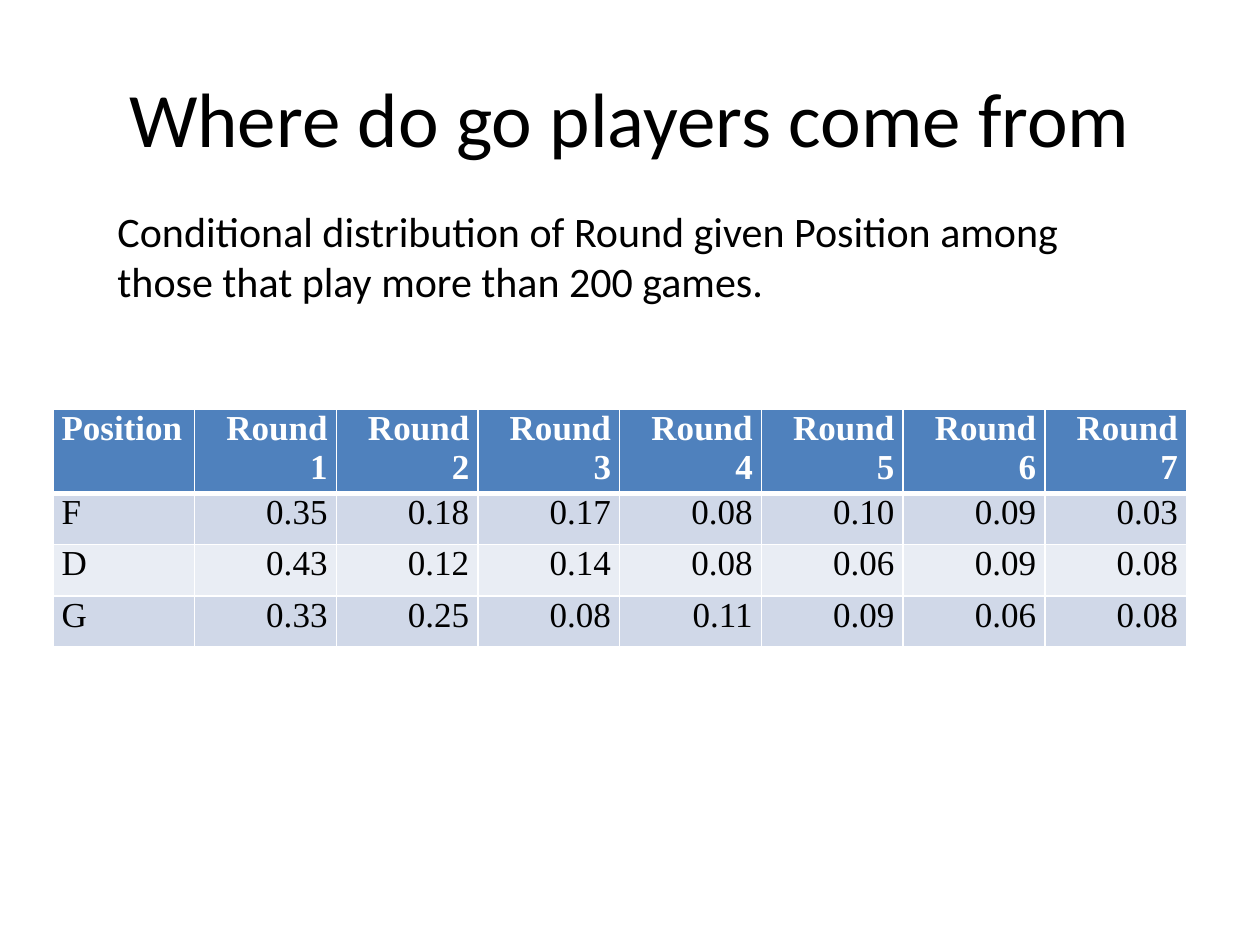
from dataclasses import dataclass

import lxml.etree
import pptx
import pptx.dml.color
import pptx.enum.text
import pptx.oxml.ns
import pptx.util

Pt = pptx.util.Pt
ALIGN = pptx.enum.text.PP_ALIGN
ANCHOR = pptx.enum.text.MSO_ANCHOR
FIT = pptx.enum.text.MSO_AUTO_SIZE

HEADER = ["Position"] + [f"Round {n}" for n in range(1, 8)]
SHARES = {
    "F": [0.35, 0.18, 0.17, 0.08, 0.10, 0.09, 0.03],
    "D": [0.43, 0.12, 0.14, 0.08, 0.06, 0.09, 0.08],
    "G": [0.33, 0.25, 0.08, 0.11, 0.09, 0.06, 0.08],
}
COL_WIDTH, ROW_HEIGHT, HEADER_HEIGHT = 81, 29.2, 45


@dataclass
class TextBlock:
    box: tuple[float, float, float, float]
    lines: list[str]
    size: float
    align: ALIGN
    frame: dict


@dataclass
class RowStyle:
    fill: str
    color: str
    bold: bool
    top: float
    bottom: float


TEXTS = [
    TextBlock((36, 21.6, 648, 90), ["Where do go players come from"], 44, ALIGN.CENTER,
              {"word_wrap": True, "vertical_anchor": ANCHOR.MIDDLE}),
    TextBlock((60, 113.8, 563, 65.5),
              ["Conditional distribution of Round given Position among",
               "those that play more than 200 games."], 24, ALIGN.LEFT,
              {"word_wrap": False, "auto_size": FIT.SHAPE_TO_FIT_TEXT}),
]
ROW_STYLES = [
    RowStyle("4F81BD", "FFFFFF", True, 1, 3),
    RowStyle("D0D8E8", "000000", False, 3, 1),
    RowStyle("E9EDF4", "000000", False, 1, 1),
    RowStyle("D0D8E8", "000000", False, 1, 1),
]


def rgb(value: str) -> pptx.dml.color.RGBColor:
    return pptx.dml.color.RGBColor.from_string(value)


def apply(target, values: dict) -> None:
    for name, value in values.items():
        setattr(target, name, value)


def write(p, text: str, align: ALIGN, color: str, font: dict) -> None:
    p.alignment = align
    r = p.add_run()
    r.text = text
    apply(r.font, font)
    r.font.color.rgb = rgb(color)


def draw_text(s, block: TextBlock) -> None:
    sp = s.shapes.add_textbox(*map(Pt, block.box))
    tf = sp.text_frame
    apply(tf, block.frame)
    for i, line in enumerate(block.lines):
        p = tf.add_paragraph() if i else tf.paragraphs[0]
        write(p, line, block.align, "000000", {"name": "Calibri", "size": Pt(block.size)})


def add_border(cell, side: str, width: float) -> None:
    qn = pptx.oxml.ns.qn
    ln = lxml.etree.SubElement(cell._tc.get_or_add_tcPr(), qn(f"a:ln{side}"), w=str(Pt(width)))
    fill = lxml.etree.SubElement(ln, qn("a:solidFill"))
    lxml.etree.SubElement(fill, qn("a:srgbClr"), val="FFFFFF")


def draw_cell(cell, text: str, align: ALIGN, style: RowStyle) -> None:
    for side, width in {"L": 1, "R": 1, "T": style.top, "B": style.bottom}.items():
        add_border(cell, side, width)
    cell.fill.solid()
    cell.fill.fore_color.rgb = rgb(style.fill)
    apply(cell, {"margin_left": Pt(5), "margin_right": Pt(5), "margin_top": 0, "margin_bottom": 0})
    write(cell.text_frame.paragraphs[0], text, align, style.color,
          {"name": "Times New Roman", "size": Pt(20), "bold": style.bold})


def draw_table(s) -> None:
    rows = [HEADER] + [[pos] + [f"{v:.2f}" for v in values] for pos, values in SHARES.items()]
    heights = [HEADER_HEIGHT] + [ROW_HEIGHT] * len(SHARES)
    table = s.shapes.add_table(len(rows), len(HEADER), Pt(30.2), Pt(234),
                               Pt(COL_WIDTH * len(HEADER)), Pt(sum(heights))).table
    for col in table.columns:
        col.width = Pt(COL_WIDTH)
    for i, (values, height, style) in enumerate(zip(rows, heights, ROW_STYLES)):
        table.rows[i].height = Pt(height)
        for j, text in enumerate(values):
            draw_cell(table.cell(i, j), text, ALIGN.RIGHT if j else ALIGN.LEFT, style)


def main() -> None:
    prs = pptx.Presentation()
    apply(prs, {"slide_width": Pt(720), "slide_height": Pt(540)})
    s = prs.slides.add_slide(prs.slide_layouts[6])
    for block in TEXTS:
        draw_text(s, block)
    draw_table(s)
    prs.save("out.pptx")


if __name__ == "__main__":
    main()
